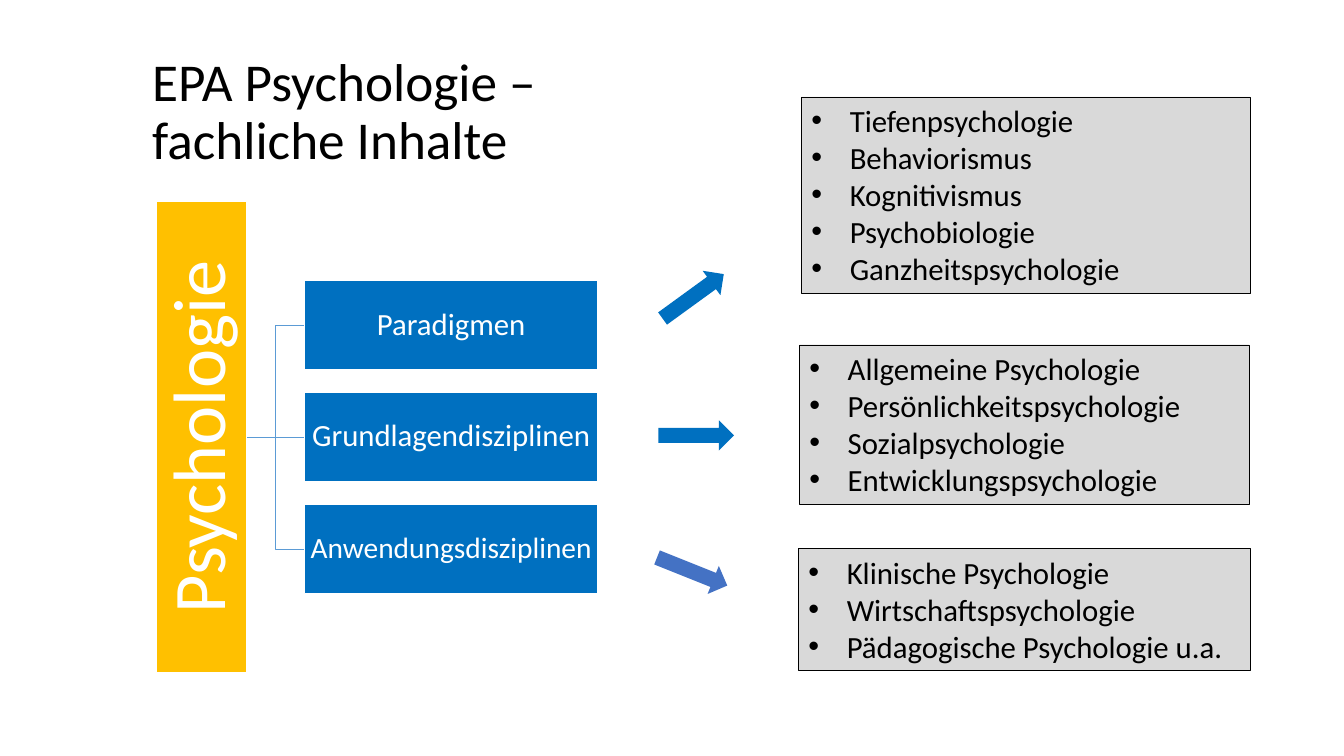
from lxml import etree
from pptx import Presentation
from pptx.dml.color import RGBColor
from pptx.enum.shapes import MSO_CONNECTOR, MSO_SHAPE
from pptx.enum.text import MSO_ANCHOR, MSO_AUTO_SIZE, PP_ALIGN
from pptx.oxml.ns import qn
from pptx.util import Pt

RECT, ARROW = MSO_SHAPE.RECTANGLE, MSO_SHAPE.RIGHT_ARROW
ELBOW, STRAIGHT = MSO_CONNECTOR.ELBOW, MSO_CONNECTOR.STRAIGHT
MIDDLE, TOP = MSO_ANCHOR.MIDDLE, MSO_ANCHOR.TOP
LEFT, CENTER = PP_ALIGN.LEFT, PP_ALIGN.CENTER
NO_FIT, GROW = MSO_AUTO_SIZE.NONE, MSO_AUTO_SIZE.SHAPE_TO_FIT_TEXT
PX = 9144  # 100 px to the inch

THEME = {
    "font": "Calibri",
    "black": RGBColor.from_string("000000"),
    "white": RGBColor.from_string("FFFFFF"),
    "gold": RGBColor.from_string("FFC000"),
    "blue": RGBColor.from_string("0070C0"),
    "indigo": RGBColor.from_string("4472C4"),
    "branch": RGBColor.from_string("5B9BD5"),
    "grey": RGBColor.from_string("D9D9D9"),
    "title": 38, "root": 53, "text": 22, "tight": 21,
}


def add_box(kind, box, fill, edge=None, width=1, turn=0):
    shape = slide.shapes.add_shape(kind, *(n * PX for n in box))
    shape.shadow.inherit = False
    shape.rotation = turn
    shape.fill.solid()
    shape.fill.fore_color.rgb = THEME[fill]
    if edge:
        shape.line.color.rgb = THEME[edge]
        shape.line.width = Pt(width)
    else:
        shape.line.fill.background()
    return shape


def write(shape, lines, size, color, align, anchor, inset=None, space=None):
    """Fill a shape with one paragraph per line; inset is in px."""
    frame = shape.text_frame
    frame.word_wrap = True
    frame.auto_size = NO_FIT
    frame.vertical_anchor = anchor
    if inset is not None:
        frame.margin_left = frame.margin_right = inset * PX
        frame.margin_top = frame.margin_bottom = inset * PX
    frame.text = "\n".join(lines)
    for para in frame.paragraphs:
        para.alignment = align
        para.line_spacing = space
        para.font.name = THEME["font"]
        para.font.size = Pt(THEME[size])
        para.font.color.rgb = THEME[color]
    return frame


deck = Presentation()
deck.slide_width, deck.slide_height = 1333 * PX, 750 * PX
slide = deck.slides.add_slide(deck.slide_layouts[5])

title = slide.shapes.title
title.left, title.top, title.width, title.height = (
    n * PX for n in (141, 40, 601, 145))
frame = write(title, ["EPA Psychologie – fachliche Inhalte"],
              "title", "black", LEFT, MIDDLE, space=0.9)
frame.margin_right = 40 * PX

# Tree: a turned root bar, three branches, three fields
MID, STEP, HIGH = 434, 111, 89
FIELDS = [
    ("Paradigmen", "text", 2),
    ("Grundlagendisziplinen", "text", 2),
    ("Anwendungsdisziplinen", "tight", 1),
]
for row in (-1, 0, 1):
    kind = ELBOW if row else STRAIGHT
    branch = slide.shapes.add_connector(
        kind, 244 * PX, MID * PX, 302 * PX, (MID + row * STEP) * PX)
    branch.line.color.rgb = THEME["branch"]
    branch.line.width = Pt(1)
    etree.SubElement(branch._element.spPr, qn("a:effectLst"))

root = add_box(RECT, (-34, 389, 468, HIGH), "gold", "white", turn=270)
write(root, ["Psychologie"], "root", "white", CENTER, MIDDLE, 4, 0.9)
for row, (name, size, inset) in enumerate(FIELDS):
    field = add_box(RECT, (302, 278 + row * STEP, 291, HIGH), "blue", "white")
    write(field, [name], size, "white", CENTER, MIDDLE, inset, 0.9)

# Each field's arrow and list of topics
ARROWS = [
    (650, 279, 324, "blue"),
    (653, 417, 0, "blue"),
    (649, 552, 21.8, "indigo"),
]
for left, top, turn, fill in ARROWS:
    add_box(ARROW, (left, top, 75, 30), fill, turn=turn)

TOPICS = [
    ((795, 96, 445, 195), ["Tiefenpsychologie", "Behaviorismus",
                           "Kognitivismus", "Psychobiologie",
                           "Ganzheitspsychologie"]),
    ((793, 342, 446, 158), ["Allgemeine Psychologie",
                            "Persönlichkeitspsychologie",
                            "Sozialpsychologie",
                            "Entwicklungspsychologie"]),
    ((792, 544, 448, 121), ["Klinische Psychologie",
                            "Wirtschaftspsychologie",
                            "Pädagogische Psychologie u.a."]),
]
for box, lines in TOPICS:
    panel = add_box(RECT, box, "grey", "black", 0.25)
    frame = write(panel, lines, "text", "black", LEFT, TOP)
    frame.auto_size = GROW
    for para in frame.paragraphs:
        props = para._p.get_or_add_pPr()
        props.set("marL", str(38 * PX))
        props.set("indent", str(-38 * PX))
        bullet = etree.Element(qn("a:buChar"), char="•")
        font = etree.Element(qn("a:buFont"), typeface="Arial")
        props.find(qn("a:defRPr")).addprevious(font)
        font.addnext(bullet)

deck.save("out.pptx")
